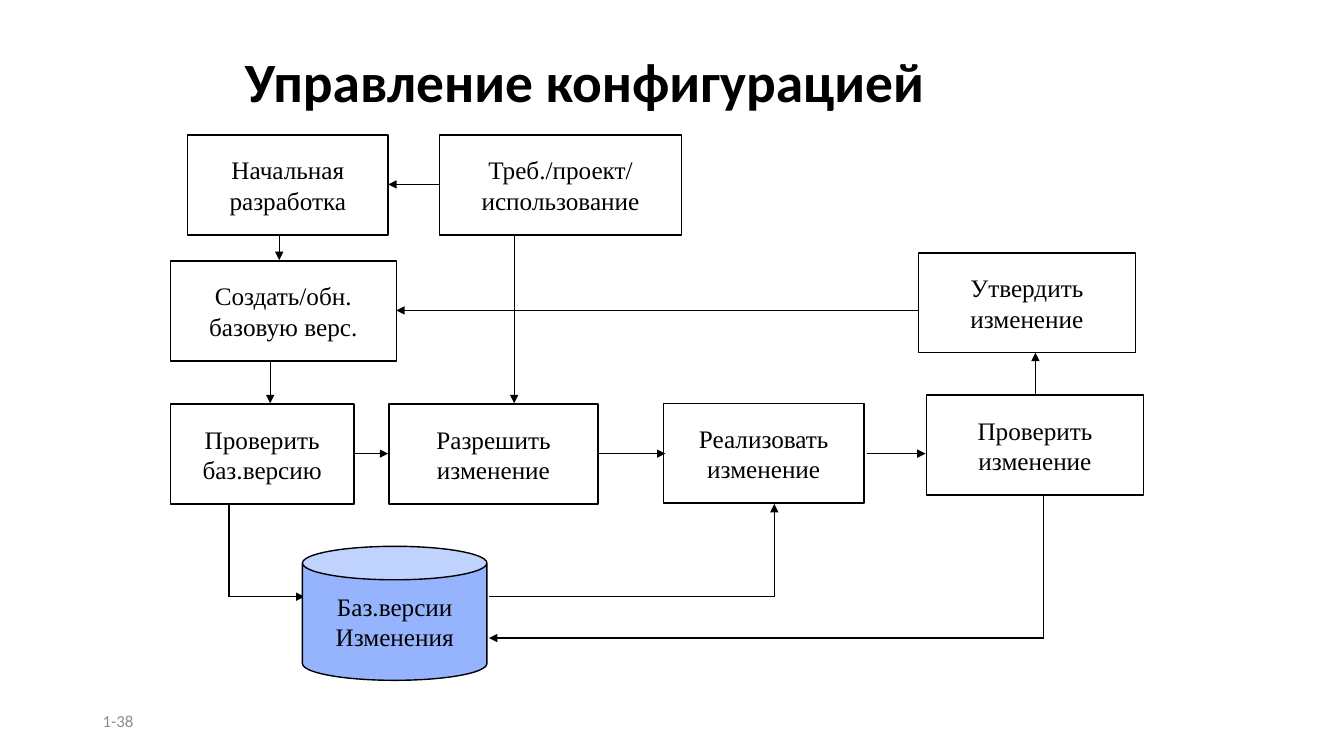
from dataclasses import dataclass
from itertools import pairwise

from pptx import Presentation
from pptx.dml.color import RGBColor as RGB
from pptx.enum.shapes import MSO_CONNECTOR as LINK, MSO_SHAPE as SHAPE
from pptx.enum.text import MSO_ANCHOR as ANCHOR, MSO_AUTO_SIZE as FIT, PP_ALIGN as ALIGN
from pptx.oxml.ns import qn
from pptx.oxml.xmlchemy import OxmlElement as Node
from pptx.util import Inches, Pt


@dataclass(frozen=True)
class Theme:
    ink: RGB = RGB(0x00, 0x00, 0x00)
    paper: RGB = RGB(0xFF, 0xFF, 0xFF)
    store: RGB = RGB(0x96, 0xB4, 0xFE)
    gray: RGB = RGB(0x8C, 0x8C, 0x8C)
    head: str = "Calibri"
    body: str = "Times New Roman"
    title: float = 39.6
    label: float = 18
    page: float = 12
    line: float = 1


THEME = Theme()
HIGH = 0.99  # height of every step box

# Step boxes: left, top, width, lines of text
STEPS = [
    (1.86, 1.34, 1.99, ("Начальная", "разработка")),
    (4.36, 1.34, 2.4, ("Треб./проект/", "использование")),
    (1.69, 2.59, 2.24, ("Создать/обн.", "базовую верс.")),
    (9.11, 2.51, 2.15, ("Утвердить", "изменение")),
    (1.69, 4.01, 1.82, ("Проверить", "баз.версию")),
    (3.86, 4.01, 2.07, ("Разрешить", "изменение")),
    (6.58, 4, 1.99, ("Реализовать", "изменение")),
    (9.19, 3.92, 2.15, ("Проверить", "изменение")),
]

# Routes: corner points, with the arrowhead at the last one
ROUTES = [
    [(4.35, 1.83), (3.85, 1.83)],
    [(2.77, 2.33), (2.77, 2.58)],
    [(5.1, 2.33), (5.1, 4)],
    [(9.1, 3.08), (3.93, 3.08)],
    [(2.68, 3.58), (2.68, 4)],
    [(3.52, 4.5), (3.85, 4.5)],
    [(5.93, 4.5), (6.6, 4.5)],
    [(8.6, 4.5), (9.18, 4.5)],
    [(10.27, 3.92), (10.27, 3.5)],
    [(2.27, 5), (2.27, 5.92), (3.02, 5.92)],
    [(4.85, 5.92), (7.68, 5.92), (7.68, 5)],
    [(10.35, 4.92), (10.35, 6.33), (4.85, 6.33)],
]


def write(frame, lines, face, size, color, align, bold=False):
    frame.vertical_anchor = ANCHOR.MIDDLE
    for i, line in enumerate(lines):
        para = frame.add_paragraph() if i else frame.paragraphs[0]
        para.alignment = align
        run = para.add_run()
        run.text = line
        font = run.font
        font.name, font.size, font.bold = face, Pt(size), bold
        font.color.rgb = color


def add_title(slide, text):
    title = slide.shapes.title
    title.left, title.top = Inches(2.33), Inches(0.5)
    title.width, title.height = Inches(8.5), Inches(0.67)
    frame = title.text_frame
    frame.auto_size = FIT.NONE
    write(frame, [text], THEME.head, THEME.title, THEME.ink, ALIGN.LEFT, bold=True)
    frame.paragraphs[0].line_spacing = 0.9


def add_page(slide, text):
    box = slide.shapes.add_textbox(Inches(0.92), Inches(6.95), Inches(3), Inches(0.4))
    box.text_frame.word_wrap = True
    write(box.text_frame, [text], THEME.head, THEME.page, THEME.gray, ALIGN.LEFT)


def add_node(slide, kind, left, top, width, height, fill, lines):
    node = slide.shapes.add_shape(
        kind, Inches(left), Inches(top), Inches(width), Inches(height))
    node.shadow.inherit = False
    node.fill.solid()
    node.fill.fore_color.rgb = fill
    node.line.color.rgb = THEME.ink
    node.line.width = Pt(THEME.line)
    node.text_frame.word_wrap = False
    write(node.text_frame, lines, THEME.body, THEME.label, THEME.ink, ALIGN.CENTER)
    return node


def add_route(slide, points):
    for start, end in pairwise(points):
        link = slide.shapes.add_connector(
            LINK.STRAIGHT, *(Inches(n) for n in start + end))
        link.line.color.rgb = THEME.ink
        link.line.width = Pt(THEME.line)
        props = link.element.spPr
        props.append(Node("a:effectLst"))
    # Arrowhead on the last leg
    tip = Node("a:tailEnd")
    tip.set("type", "triangle")
    props.find(qn("a:ln")).append(tip)


def main():
    deck = Presentation()
    deck.slide_width, deck.slide_height = Inches(13.33), Inches(7.5)
    slide = deck.slides.add_slide(deck.slide_layouts[5])

    # Title and page number
    add_title(slide, "Управление конфигурацией")
    add_page(slide, "1-38")

    # Steps and the arrows between them
    for left, top, width, lines in STEPS:
        add_node(slide, SHAPE.RECTANGLE, left, top, width, HIGH, THEME.paper, lines)
    for points in ROUTES:
        add_route(slide, points)

    # Version store
    store = add_node(slide, SHAPE.CAN, 3, 5.42, 1.83, 1.33, THEME.store,
                     ("Баз.версии", "Изменения"))
    store.adjustments[0] = 0.25

    deck.save("out.pptx")


if __name__ == "__main__":
    main()
